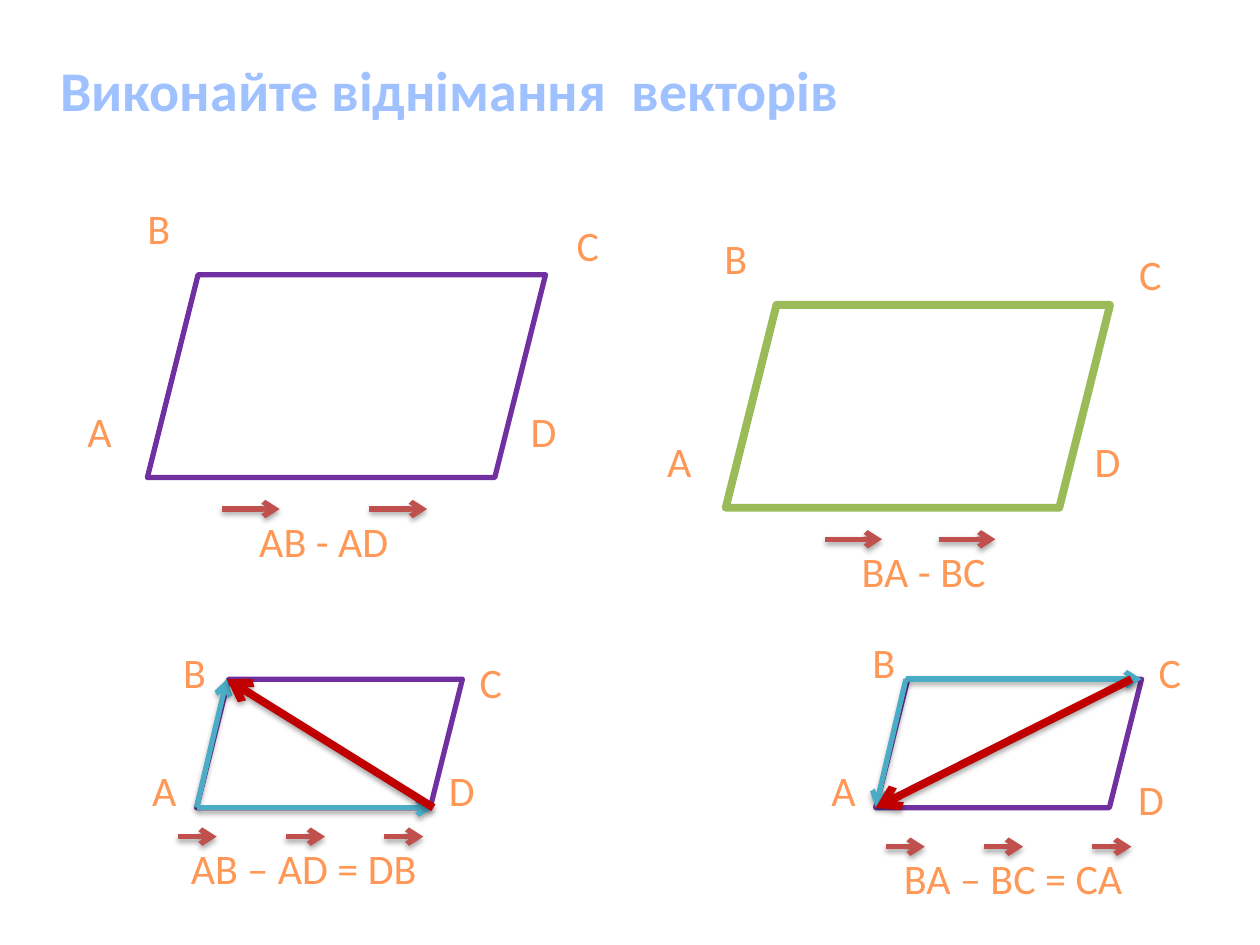
from dataclasses import dataclass

from lxml.etree import SubElement
from pptx import Presentation
from pptx.dml.color import RGBColor
from pptx.enum.shapes import MSO_CONNECTOR, MSO_SHAPE
from pptx.enum.text import MSO_ANCHOR, MSO_AUTO_SIZE, PP_ALIGN
from pptx.oxml.ns import qn
from pptx.slide import Slide
from pptx.util import Inches, Pt


@dataclass(frozen=True)
class Theme:
    font: str = "Calibri"
    title_size: int = 32
    label_size: int = 24
    title: str = "A0C1FF"
    label: str = "FF9856"
    purple: str = "7030A0"
    green: str = "9BBB59"
    operand: str = "4BACC6"
    result: str = "C00000"
    mark: str = "C0504D"
    white: str = "FFFFFF"
    thin: float = 3
    thick: float = 4.5


THEME = Theme()


@dataclass(frozen=True)
class Label:
    text: str
    left: float
    top: float
    width: float


@dataclass(frozen=True)
class Vector:
    start: tuple[float, float]
    end: tuple[float, float]
    color: str
    weight: float = THEME.thin


@dataclass(frozen=True)
class Figure:
    box: tuple[float, float, float, float]
    outline: str
    weight: float
    label_height: float
    labels: tuple[Label, ...]
    vectors: tuple[Vector, ...]
    mark_top: float
    mark_width: float
    mark_lefts: tuple[float, ...]
    fill: str | None = None


FIGURES = (
    Figure(
        (6.95, 5.39, 2.11, 1.02), THEME.purple, THEME.thin, 0.5,
        (Label("A", 6.48, 6.02, 0.43), Label("B", 6.8, 5, 0.43),
         Label("C", 9.06, 5.08, 0.45), Label("D", 8.91, 6.09, 0.45),
         Label("BA – BC = CA", 6.88, 6.72, 2.32)),
        (Vector((7.19, 5.39), (9.06, 5.39), THEME.operand),
         Vector((7.19, 5.39), (6.95, 6.41), THEME.operand),
         Vector((8.98, 5.39), (6.95, 6.41), THEME.result, THEME.thick)),
        6.72, 0.31, (7.03, 7.81, 8.67),
    ),
    Figure(
        (1.56, 5.39, 2.11, 1.02), THEME.purple, THEME.thin, 0.5,
        (Label("A", 1.09, 6.02, 0.43), Label("B", 1.33, 5.08, 0.43),
         Label("C", 3.67, 5.16, 0.45), Label("D", 3.44, 6.02, 0.45),
         Label("AB – AD = DB", 1.25, 6.64, 2.32)),
        (Vector((1.56, 6.41), (1.8, 5.39), THEME.operand),
         Vector((1.56, 6.41), (3.44, 6.41), THEME.operand),
         Vector((3.44, 6.41), (1.8, 5.39), THEME.result, THEME.thick)),
        6.64, 0.31, (1.41, 2.27, 3.05),
    ),
    Figure(
        (1.17, 2.18, 3.16, 1.61), THEME.purple, THEME.thin, 0.8,
        (Label("A", 0.47, 3.17, 0.64), Label("B", 0.94, 1.56, 0.64),
         Label("C", 4.33, 1.69, 0.67), Label("D", 3.98, 3.17, 0.67),
         Label("AB - AD", 1.52, 4.04, 2.1)),
        (), 4.04, 0.46, (1.76, 2.93),
    ),
    Figure(
        (5.76, 2.42, 3.05, 1.61), THEME.green, THEME.thick, 0.8,
        (Label("A", 5.08, 3.41, 0.62), Label("B", 5.53, 1.8, 0.62),
         Label("C", 8.81, 1.92, 0.64), Label("D", 8.47, 3.41, 0.64),
         Label("BA - BC", 6.32, 4.28, 2.02)),
        (), 4.28, 0.45, (6.55, 7.45), THEME.white,
    ),
)


def draw_title(slide: Slide, text: str) -> None:
    title = slide.shapes.title
    title.left, title.top = Inches(0.38), Inches(0.39)
    title.width, title.height = Inches(9.39), Inches(0.64)
    frame = title.text_frame
    frame.text = text
    frame.auto_size = MSO_AUTO_SIZE.NONE
    frame.vertical_anchor = MSO_ANCHOR.TOP
    paragraph = frame.paragraphs[0]
    paragraph.alignment = PP_ALIGN.LEFT
    paragraph.font.name = THEME.font
    paragraph.font.size = Pt(THEME.title_size)
    paragraph.font.bold = True
    paragraph.font.color.rgb = RGBColor.from_string(THEME.title)


def draw_parallelogram(slide: Slide, figure: Figure) -> None:
    shape = slide.shapes.add_shape(MSO_SHAPE.PARALLELOGRAM, *map(Inches, figure.box))
    shape.adjustments[0] = 0.25
    shape.shadow.inherit = False
    if figure.fill:
        shape.fill.solid()
        shape.fill.fore_color.rgb = RGBColor.from_string(figure.fill)
    else:
        shape.fill.background()
    shape.line.color.rgb = RGBColor.from_string(figure.outline)
    shape.line.width = Pt(figure.weight)


def draw_vector(slide: Slide, vector: Vector) -> None:
    connector = slide.shapes.add_connector(
        MSO_CONNECTOR.STRAIGHT, *map(Inches, vector.start + vector.end))
    connector.line.color.rgb = RGBColor.from_string(vector.color)
    connector.line.width = Pt(vector.weight)
    properties = connector.element.spPr
    SubElement(properties.find(qn("a:ln")), qn("a:tailEnd"), type="arrow")
    effects = SubElement(properties, qn("a:effectLst"))
    shadow = SubElement(effects, qn("a:outerShdw"), blurRad="40000", dist="23000",
                        dir="5400000", rotWithShape="0")
    color = SubElement(shadow, qn("a:srgbClr"), val="000000")
    SubElement(color, qn("a:alpha"), val="35000")


def draw_label(slide: Slide, label: Label, height: float) -> None:
    box = slide.shapes.add_textbox(
        *map(Inches, (label.left, label.top, label.width, height)))
    frame = box.text_frame
    frame.word_wrap = False
    frame.text = label.text
    paragraph = frame.paragraphs[0]
    paragraph.alignment = PP_ALIGN.CENTER
    paragraph.font.name = THEME.font
    paragraph.font.size = Pt(THEME.label_size)
    paragraph.font.color.rgb = RGBColor.from_string(THEME.label)


def draw_figure(slide: Slide, figure: Figure) -> None:
    draw_parallelogram(slide, figure)
    for vector in figure.vectors:
        draw_vector(slide, vector)
    for label in figure.labels:
        draw_label(slide, label, figure.label_height)
    for left in figure.mark_lefts:
        start = (left, figure.mark_top)
        end = (left + figure.mark_width, figure.mark_top)
        draw_vector(slide, Vector(start, end, THEME.mark))


def main() -> None:
    presentation = Presentation()
    presentation.slide_width, presentation.slide_height = Inches(10), Inches(7.5)
    slide = presentation.slides.add_slide(presentation.slide_layouts[5])
    draw_title(slide, "Виконайте віднімання  векторів")
    for figure in FIGURES:
        draw_figure(slide, figure)
    presentation.save("out.pptx")


if __name__ == "__main__":
    main()
